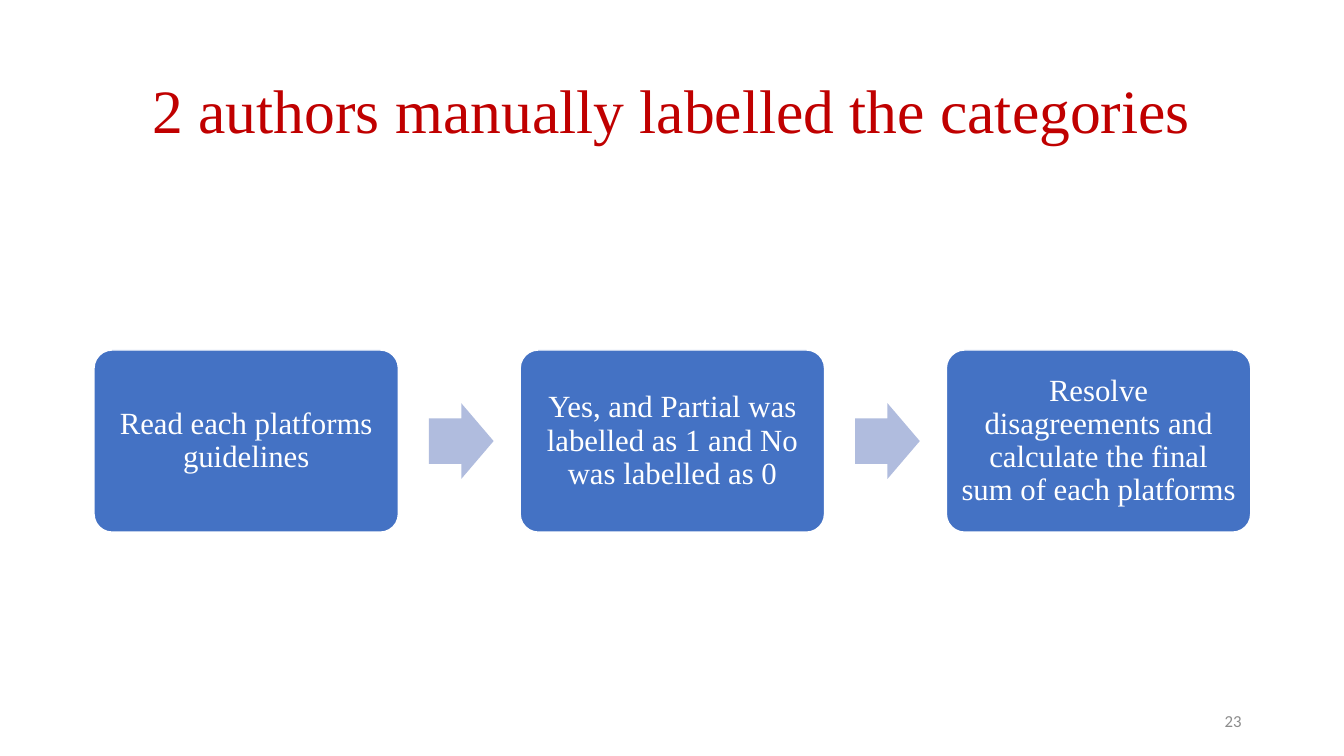
from dataclasses import dataclass

from pptx import Presentation
from pptx.dml.color import RGBColor
from pptx.enum import shapes, text
from pptx.util import Cm, Pt


@dataclass(frozen=True)
class Theme:
    title_color: RGBColor = RGBColor(0xC0, 0x00, 0x00)
    step_fill: RGBColor = RGBColor(0x44, 0x72, 0xC4)
    step_text: RGBColor = RGBColor(0xFF, 0xFF, 0xFF)
    arrow_fill: RGBColor = RGBColor(0xB0, 0xBC, 0xDE)
    number_color: RGBColor = RGBColor(0x8C, 0x8C, 0x8C)
    main_font: str = "Times New Roman"
    number_font: str = "Calibri"
    title_size: int = 44
    step_size: int = 22
    number_size: int = 12


@dataclass(frozen=True)
class Box:
    """Position and size in centimetres."""
    left: float
    top: float
    width: float
    height: float

    def lengths(self):
        return Cm(self.left), Cm(self.top), Cm(self.width), Cm(self.height)


@dataclass(frozen=True)
class Step:
    label: str
    box: Box


THEME = Theme()

# Process row: equal steps at a fixed pitch, arrows centred on their height
LABELS = [
    "Read each platforms guidelines",
    "Yes, and Partial was labelled as 1 and No was labelled as 0",
    "Resolve disagreements and calculate the final sum of each platforms",
]
ROW_LEFT, ROW_TOP, PITCH = 2.37, 8.82, 10.74
STEP_WIDTH, STEP_HEIGHT = 7.67, 4.59
ARROW_OFFSET, ARROW_WIDTH, ARROW_HEIGHT = 8.44, 1.63, 1.91
STEPS = [
    Step(label, Box(ROW_LEFT + index * PITCH, ROW_TOP, STEP_WIDTH, STEP_HEIGHT))
    for index, label in enumerate(LABELS)
]


def write_text(shape, content: str, font: str, size: int, color: RGBColor,
               alignment, line_spacing: float = 1.0) -> None:
    text_frame = shape.text_frame
    text_frame.text = content
    text_frame.word_wrap = True
    text_frame.auto_size = text.MSO_AUTO_SIZE.NONE
    text_frame.vertical_anchor = text.MSO_ANCHOR.MIDDLE
    paragraph = text_frame.paragraphs[0]
    paragraph.alignment = alignment
    paragraph.line_spacing = line_spacing
    run_font = paragraph.runs[0].font
    run_font.name = font
    run_font.size = Pt(size)
    run_font.color.rgb = color


def add_filled_shape(slide, kind, box: Box, fill: RGBColor):
    shape = slide.shapes.add_shape(kind, *box.lengths())
    shape.shadow.inherit = False
    shape.fill.solid()
    shape.fill.fore_color.rgb = fill
    shape.line.fill.background()
    return shape


def add_step(slide, step: Step) -> None:
    shape = add_filled_shape(slide, shapes.MSO_SHAPE.ROUNDED_RECTANGLE,
                             step.box, THEME.step_fill)
    shape.adjustments[0] = 0.1
    shape.line.color.rgb = THEME.step_text
    shape.line.width = Pt(1)
    write_text(shape, step.label, THEME.main_font, THEME.step_size,
               THEME.step_text, text.PP_ALIGN.CENTER, 0.9)
    text_frame = shape.text_frame
    text_frame.margin_left = text_frame.margin_right = Cm(0.22)
    text_frame.margin_top = text_frame.margin_bottom = Cm(0.22)


def add_arrow_after(slide, step: Step) -> None:
    top = step.box.top + (step.box.height - ARROW_HEIGHT) / 2
    box = Box(step.box.left + ARROW_OFFSET, top, ARROW_WIDTH, ARROW_HEIGHT)
    arrow = add_filled_shape(slide, shapes.MSO_SHAPE.RIGHT_ARROW, box,
                             THEME.arrow_fill)
    arrow.adjustments[0] = 0.6
    arrow.adjustments[1] = 0.5


def main() -> None:
    presentation = Presentation()
    presentation.slide_width = Cm(33.87)
    presentation.slide_height = Cm(19.05)
    slide = presentation.slides.add_slide(presentation.slide_layouts[5])

    # Title
    title = slide.shapes.title
    title.left, title.top, title.width, title.height = Box(
        2.33, 1.01, 29.21, 3.68).lengths()
    write_text(title, "2 authors manually labelled the categories",
               THEME.main_font, THEME.title_size, THEME.title_color,
               text.PP_ALIGN.CENTER, 0.9)

    # Slide number
    number = slide.shapes.add_textbox(*Box(23.92, 17.66, 7.62, 1.01).lengths())
    write_text(number, "23", THEME.number_font, THEME.number_size,
               THEME.number_color, text.PP_ALIGN.RIGHT)

    # Process steps with arrows between them
    for step in STEPS:
        add_step(slide, step)
    for step in STEPS[:-1]:
        add_arrow_after(slide, step)

    presentation.save("out.pptx")


if __name__ == "__main__":
    main()
